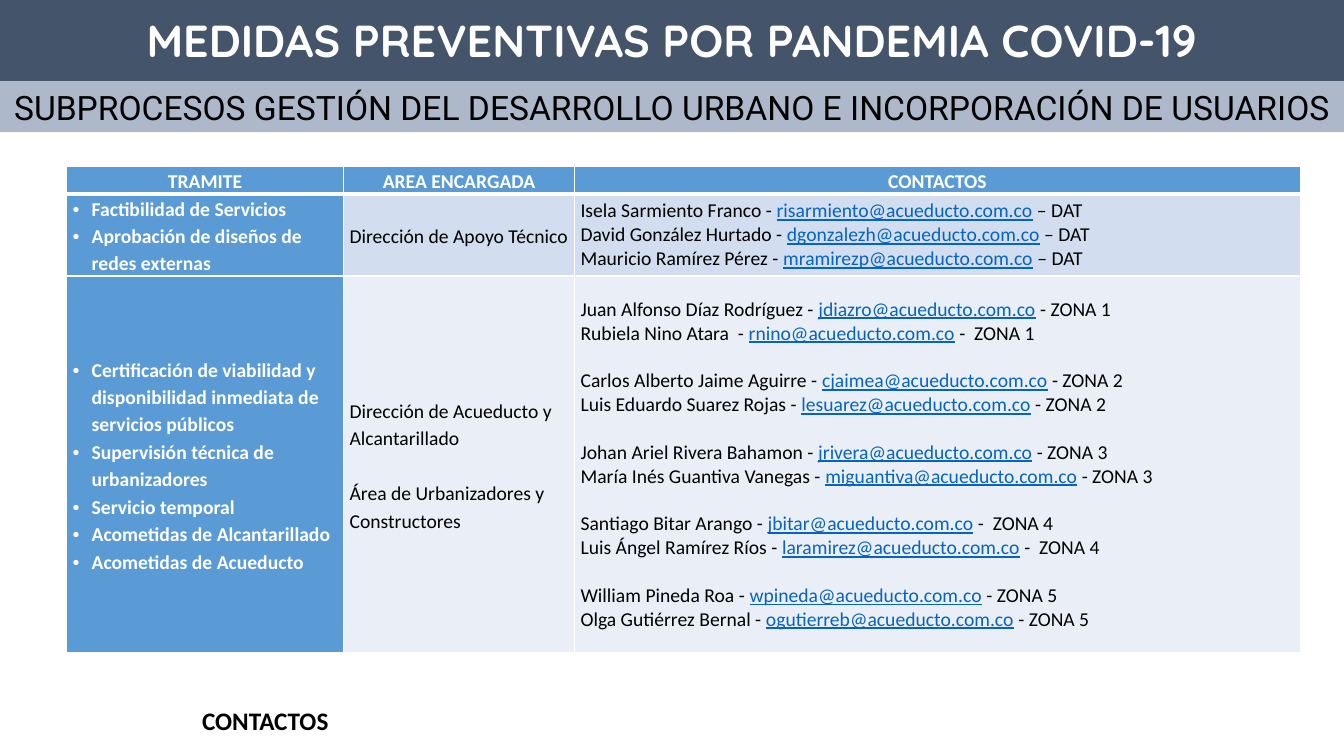
import pptx
import pptx.dml.color
import pptx.enum.shapes
import pptx.enum.text
import pptx.oxml
import pptx.oxml.ns
import pptx.util

Cm, Pt = pptx.util.Cm, pptx.util.Pt
ALIGN = pptx.enum.text.PP_ALIGN
MID = pptx.enum.text.MSO_ANCHOR.MIDDLE
TOP = pptx.enum.text.MSO_ANCHOR.TOP

TITLE = "MEDIDAS PREVENTIVAS POR PANDEMIA COVID-19"
THEME = "SUBPROCESOS GESTIÓN DEL DESARROLLO URBANO E INCORPORACIÓN DE USUARIOS"
LABEL = "CONTACTOS"
MAIL = "@acueducto.com.co"
WHITE, BLACK, BLUE, LINK = "FFFFFF", "000000", "5B9BD5", "0563C1"

HEADS = ["TRAMITE", "AREA ENCARGADA", "CONTACTOS"]
ROWS = [
    {
        "tasks": ["Factibilidad de Servicios", "Aprobación de diseños de redes externas"],
        "areas": ["Dirección de Apoyo Técnico"],
        "people": [[
            ("Isela Sarmiento Franco - ", "risarmiento", " – DAT"),
            ("David González Hurtado - ", "dgonzalezh", " – DAT"),
            ("Mauricio Ramírez Pérez - ", "mramirezp", " – DAT"),
        ]],
        "fill": "D2DEEF",
    },
    {
        "tasks": [
            "Certificación de viabilidad y disponibilidad inmediata de servicios públicos",
            "Supervisión técnica de urbanizadores",
            "Servicio temporal",
            "Acometidas de Alcantarillado",
            "Acometidas de Acueducto",
        ],
        "areas": ["Dirección de Acueducto y Alcantarillado",
                  "Área de Urbanizadores y Constructores"],
        "people": [
            [("Juan Alfonso Díaz Rodríguez - ", "jdiazro", " - ZONA 1"),
             ("Rubiela Nino Atara  - ", "rnino", " -  ZONA 1")],
            [("Carlos Alberto Jaime Aguirre - ", "cjaimea", " - ZONA 2"),
             ("Luis Eduardo Suarez Rojas - ", "lesuarez", " - ZONA 2")],
            [("Johan Ariel Rivera Bahamon - ", "jrivera", " - ZONA 3"),
             ("María Inés Guantiva Vanegas - ", "miguantiva", " - ZONA 3")],
            [("Santiago Bitar Arango - ", "jbitar", " -  ZONA 4"),
             ("Luis Ángel Ramírez Ríos - ", "laramirez", " -  ZONA 4")],
            [("William Pineda Roa - ", "wpineda", " - ZONA 5"),
             ("Olga Gutiérrez Bernal - ", "ogutierreb", " - ZONA 5")],
        ],
        "fill": "EAEFF7",
    },
]
WIDTHS = [6.98, 5.82, 18.29]
HEIGHTS = [0.68, 2.02, 9.5]
BANDS = [
    (TITLE, -0.03, 2.08, "44546A", 32, "Quicksand", WHITE, True, MID),
    (THEME, 2.06, 1.27, "ADB9CA", 24, "Roboto", BLACK, False, TOP),
]


def paint(target, code):
    target.rgb = pptx.dml.color.RGBColor.from_string(code)


def solid(fill, code):
    fill.solid()
    paint(fill.fore_color, code)


def style(para, size, face, code, bold=False):
    font = para.font
    font.size, font.name, font.bold = Pt(size), face, bold
    paint(font.color, code)


def add_line(frame, first):
    return frame.paragraphs[0] if first else frame.add_paragraph()


def add_xml(node, text):
    space = pptx.oxml.ns.nsdecls("a")
    node.append(pptx.oxml.parse_xml(text.replace(" ", f" {space} ", 1)))


def dress(cell, fill, head):
    props = cell._tc.get_or_add_tcPr()
    for side in "LRTB":
        wide = Pt(3 if head and side == "B" else 1)
        add_xml(props, f'<a:ln{side} w="{wide}"><a:solidFill>'
                       f'<a:srgbClr val="{WHITE}"/></a:solidFill></a:ln{side}>')
    solid(cell.fill, fill)
    cell.margin_left = cell.margin_right = Cm(0.15)
    cell.margin_top = cell.margin_bottom = 0
    cell.vertical_anchor = TOP if head else MID


def write_head(cell, text):
    dress(cell, BLUE, True)
    para = cell.text_frame.paragraphs[0]
    para.text, para.alignment, para.line_spacing = text, ALIGN.CENTER, 1.15
    style(para, 14, "Calibri", WHITE, True)


def write_tasks(cell, tasks):
    dress(cell, BLUE, False)
    for i, task in enumerate(tasks):
        para = add_line(cell.text_frame, i == 0)
        para.text, para.line_spacing = task, 1.15
        props = para._p.get_or_add_pPr()
        props.set("marL", str(Cm(0.48)))
        props.set("indent", str(-Cm(0.48)))
        add_xml(props, '<a:buFont typeface="Arial"/>')
        add_xml(props, '<a:buChar char="•"/>')
        style(para, 14, "Calibri", WHITE, True)


def write_areas(cell, areas, fill):
    dress(cell, fill, False)
    for i, area in enumerate(areas):
        para = add_line(cell.text_frame, i == 0)
        para.text, para.line_spacing = area, 1.15
        if i:
            para.space_before = Pt(19.7)
        style(para, 14, "Calibri", BLACK)


def write_people(cell, groups, fill):
    dress(cell, fill, False)
    for i, group in enumerate(groups):
        for j, (name, user, zone) in enumerate(group):
            para = add_line(cell.text_frame, i == j == 0)
            if i and j == 0:
                para.space_before = Pt(17)
            style(para, 14, "Calibri", BLACK)
            for text in (name, user + MAIL, zone):
                run = para.add_run()
                run.text = text
                if MAIL in text:
                    run.font.underline = True
                    paint(run.font.color, LINK)


deck = pptx.Presentation()
deck.slide_width, deck.slide_height = Cm(33.87), Cm(19.05)
slide = deck.slides.add_slide(deck.slide_layouts[6])

table = slide.shapes.add_table(
    len(HEIGHTS), len(WIDTHS), Cm(1.68), Cm(4.19), Cm(sum(WIDTHS)), Cm(sum(HEIGHTS))
).table
table.horz_banding = False
for col, wide in zip(table.columns, WIDTHS):
    col.width = Cm(wide)
for row, high in zip(table.rows, HEIGHTS):
    row.height = Cm(high)
for i, head in enumerate(HEADS):
    write_head(table.cell(0, i), head)
for i, row in enumerate(ROWS, 1):
    write_tasks(table.cell(i, 0), row["tasks"])
    write_areas(table.cell(i, 1), row["areas"], row["fill"])
    write_people(table.cell(i, 2), row["people"], row["fill"])

for text, top, high, fill, size, face, code, bold, anchor in BANDS:
    band = slide.shapes.add_shape(
        pptx.enum.shapes.MSO_SHAPE.RECTANGLE, 0, Cm(top), deck.slide_width, Cm(high))
    band.shadow.inherit = False
    solid(band.fill, fill)
    band.line.fill.background()
    frame = band.text_frame
    frame.word_wrap, frame.vertical_anchor = True, anchor
    para = frame.paragraphs[0]
    para.text, para.alignment = text, ALIGN.CENTER
    style(para, size, face, code, bold)

frame = slide.shapes.add_textbox(Cm(1.07), Cm(17.65), Cm(11.23), Cm(1.02)).text_frame
frame.word_wrap = True
para = frame.paragraphs[0]
para.text, para.alignment = LABEL, ALIGN.CENTER
style(para, 18, "Calibri", BLACK, True)

deck.save("out.pptx")
